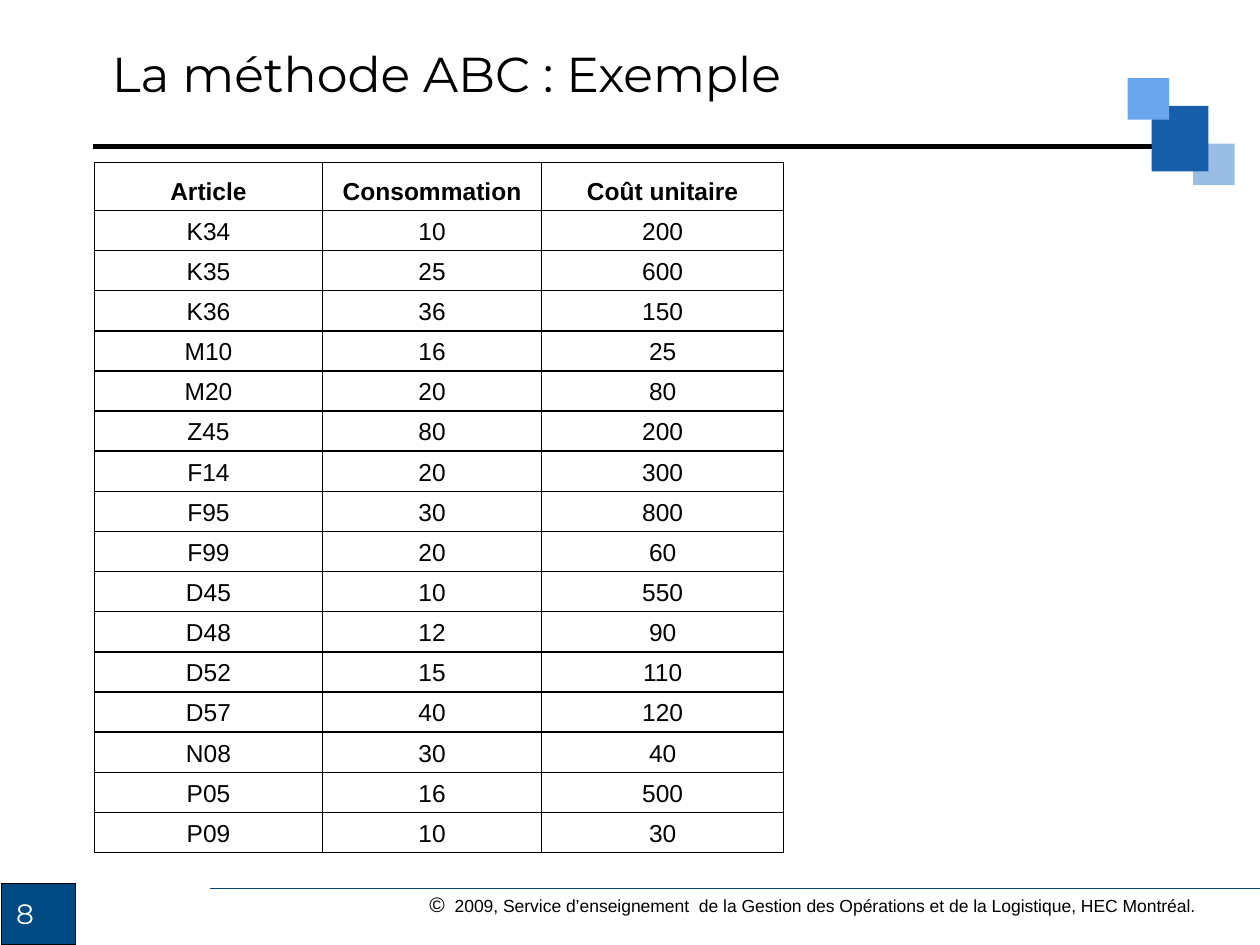
from dataclasses import dataclass
from itertools import product

from lxml.etree import SubElement
from pptx import Presentation
from pptx.dml.color import RGBColor
from pptx.enum.shapes import MSO_CONNECTOR as Connector, MSO_SHAPE as Preset
from pptx.enum.text import MSO_ANCHOR as Anchor, PP_ALIGN as Align
from pptx.oxml.ns import qn
from pptx.util import Inches, Pt

BLACK = RGBColor(0x00, 0x00, 0x00)
WHITE = RGBColor(0xFF, 0xFF, 0xFF)
NAVY = RGBColor(0x00, 0x49, 0x82)
PALE_BLUE = RGBColor(0x99, 0xBD, 0xE3)
DEEP_BLUE = RGBColor(0x18, 0x5F, 0xAB)
SKY_BLUE = RGBColor(0x69, 0xA6, 0xEB)


@dataclass
class Block:
    area: tuple
    fill: RGBColor
    outline: RGBColor | None = None


@dataclass
class Rule:
    left: float
    right: float
    top: float
    color: RGBColor
    width: float


@dataclass
class Span:
    text: str
    size: float
    font: str = "Arial"
    color: RGBColor = BLACK
    bold: bool = False


@dataclass
class Label:
    area: tuple
    spans: list
    anchor: Anchor = Anchor.TOP


BLOCKS = [
    Block((0.01, 7.01, 0.59, 0.49), NAVY, BLACK),
    Block((9.47, 1.14, 0.33, 0.33), PALE_BLUE),
    Block((9.14, 0.84, 0.45, 0.52), DEEP_BLUE),
    Block((8.95, 0.62, 0.33, 0.33), SKY_BLUE),
]
RULES = [
    Rule(1.67, 10, 7.05, NAVY, 0.75),
    Rule(0.74, 9.41, 1.16, BLACK, 2.75),
]
LABELS = [
    Label((0.79, 0, 8.16, 1.15),
          [Span("La méthode ABC : Exemple", 28, "Montserrat")], Anchor.MIDDLE),
    Label((0.03, 7.07, 0.5, 0.43), [Span("8", 16, "Montserrat", WHITE)]),
    Label((3.31, 7.03, 6.42, 0.3), [
        Span("©", 12),
        Span("  2009, Service d’enseignement  de la Gestion des Opérations"
             " et de la Logistique, HEC Montréal.", 10),
    ]),
]

HEADINGS = ("Article", "Consommation", "Coût unitaire")
ITEMS = [
    ("K34", 10, 200), ("K35", 25, 600), ("K36", 36, 150), ("M10", 16, 25),
    ("M20", 20, 80), ("Z45", 80, 200), ("F14", 20, 300), ("F95", 30, 800),
    ("F99", 20, 60), ("D45", 10, 550), ("D48", 12, 90), ("D52", 15, 110),
    ("D57", 40, 120), ("N08", 30, 40), ("P05", 16, 500), ("P09", 10, 30),
]
COLUMN_WIDTHS = (1.81, 1.74, 1.92)
TABLE_HEIGHT, HEADER_HEIGHT = 5.48, 0.38


def inches(values: tuple) -> list:
    return [Inches(value) for value in values]


def apply(target, values: dict) -> None:
    for name, value in values.items():
        setattr(target, name, value)


def add_span(para, span: Span) -> None:
    run = para.add_run()
    run.text = span.text
    apply(run.font, {"size": Pt(span.size), "name": span.font, "bold": span.bold})
    run.font.color.rgb = span.color


def draw_block(slide, block: Block) -> None:
    shape = slide.shapes.add_shape(Preset.RECTANGLE, *inches(block.area))
    shape.shadow.inherit = False
    shape.fill.solid()
    shape.fill.fore_color.rgb = block.fill
    if block.outline is None:
        shape.line.fill.background()
    else:
        shape.line.color.rgb = block.outline
        shape.line.width = Pt(0.75)


def draw_rule(slide, rule: Rule) -> None:
    ends = inches((rule.left, rule.top, rule.right, rule.top))
    line = slide.shapes.add_connector(Connector.STRAIGHT, *ends)
    line.line.color.rgb = rule.color
    line.line.width = Pt(rule.width)
    SubElement(line._element.spPr, qn("a:effectLst"))


def draw_label(slide, label: Label) -> None:
    box = slide.shapes.add_textbox(*inches(label.area))
    apply(box.text_frame, {"word_wrap": True, "vertical_anchor": label.anchor})
    for span in label.spans:
        add_span(box.text_frame.paragraphs[0], span)


def draw_borders(cell, color: RGBColor, width: float) -> None:
    properties = cell._tc.get_or_add_tcPr()
    for index, side in enumerate(("lnL", "lnR", "lnT", "lnB")):
        border = properties.makeelement(qn(f"a:{side}"), {"w": str(Pt(width))})
        fill = SubElement(border, qn("a:solidFill"))
        SubElement(fill, qn("a:srgbClr"), val=str(color))
        properties.insert(index, border)


def draw_table(slide, rows: list) -> None:
    area = inches((0.75, 1.29, sum(COLUMN_WIDTHS), TABLE_HEIGHT))
    table = slide.shapes.add_table(len(rows), len(HEADINGS), *area).table
    apply(table, {"first_row": False, "horz_banding": False})
    for column, width in zip(table.columns, COLUMN_WIDTHS):
        column.width = Inches(width)
    item_height = (TABLE_HEIGHT - HEADER_HEIGHT) / len(ITEMS)
    for index, row in enumerate(table.rows):
        row.height = Inches(item_height if index else HEADER_HEIGHT)

    for row, column in product(range(len(rows)), range(len(HEADINGS))):
        cell = table.cell(row, column)
        apply(cell, {"vertical_anchor": Anchor.BOTTOM,
                     "margin_top": Inches(0.04), "margin_bottom": Inches(0.04)})
        cell.fill.background()
        draw_borders(cell, BLACK, 1)
        para = cell.text_frame.paragraphs[0]
        para.alignment = Align.CENTER
        add_span(para, Span(str(rows[row][column]), 14, bold=row == 0))


def main() -> None:
    deck = Presentation()
    apply(deck, {"slide_width": Inches(10), "slide_height": Inches(7.5)})
    slide = deck.slides.add_slide(deck.slide_layouts[6])

    # Rules sit behind the corner squares
    for rule in RULES:
        draw_rule(slide, rule)
    for block in BLOCKS:
        draw_block(slide, block)

    # Title, page number and copyright line
    for label in LABELS:
        draw_label(slide, label)

    # Items with their consumption and unit cost
    draw_table(slide, [HEADINGS, *ITEMS])
    deck.save("out.pptx")


if __name__ == "__main__":
    main()
